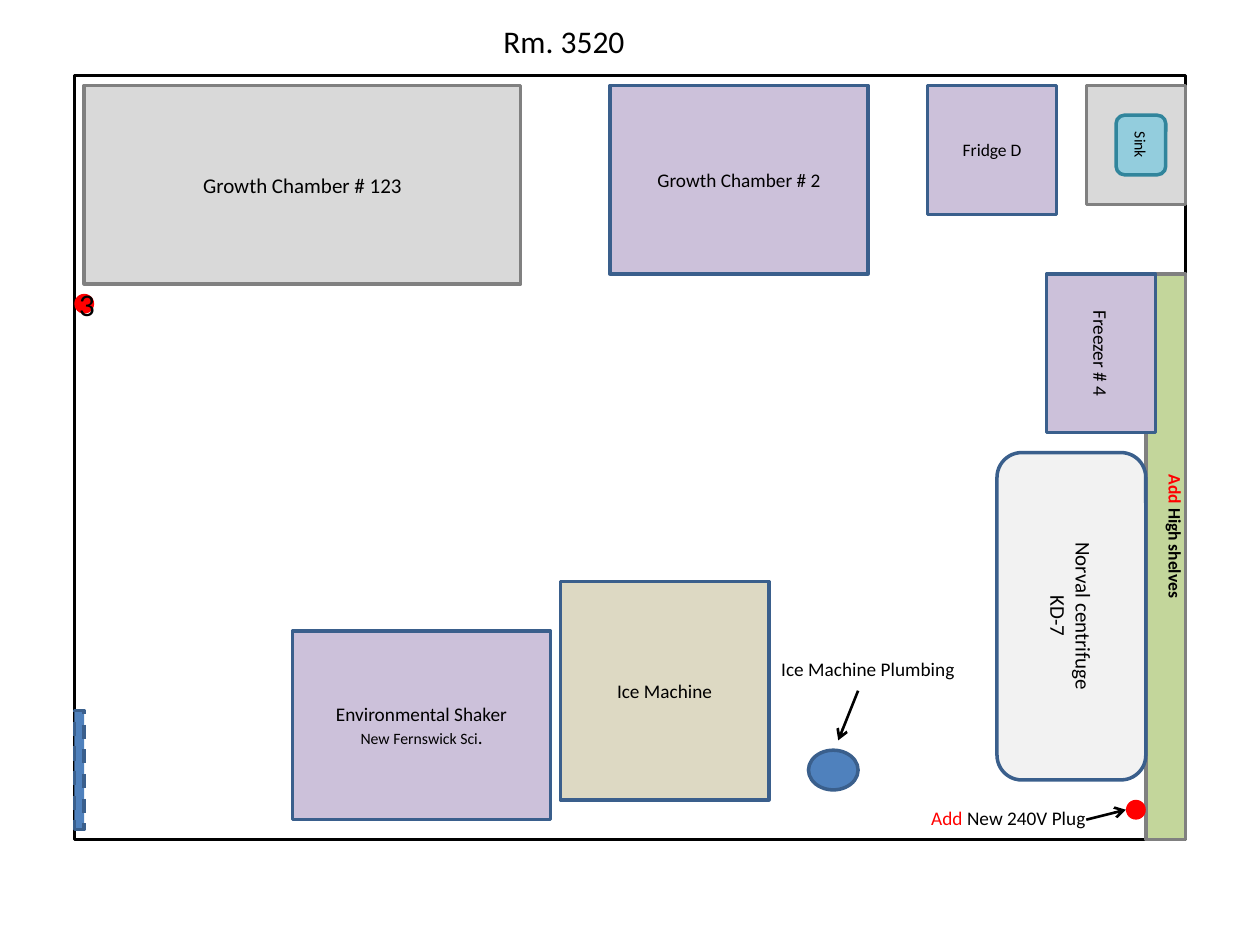
"""Floor plan of a lab room, drawn on a 2 mm grid from the room's corner."""
from lxml import etree
from pptx import Presentation
from pptx import util as u
from pptx.dml.color import RGBColor
from pptx.enum import dml, shapes, text
from pptx.oxml.ns import qn

BLACK = RGBColor(0, 0, 0)
RED = RGBColor(0xFF, 0, 0)
BLUE = RGBColor(0x4F, 0x81, 0xBD)
NAVY = RGBColor(0x3A, 0x5F, 0x8C)
GRAY = RGBColor(0x80, 0x80, 0x80)
SILVER = RGBColor(0xD9, 0xD9, 0xD9)
WHITE = RGBColor(0xF2, 0xF2, 0xF2)
LILAC = RGBColor(0xCC, 0xC1, 0xDA)
GREEN = RGBColor(0xC3, 0xD6, 0x9B)
AQUA = RGBColor(0x93, 0xCD, 0xDD)
TEAL = RGBColor(0x31, 0x85, 0x9C)
SAND = RGBColor(0xDD, 0xD9, 0xC3)

RECT = shapes.MSO_SHAPE.RECTANGLE
ROUND = shapes.MSO_SHAPE.ROUNDED_RECTANGLE
OVAL = shapes.MSO_SHAPE.OVAL
LEFT, TOP = u.Inches(0.59), u.Inches(0.6)
CELL = u.Mm(2)


def spot(col, row):
    """Turn a grid point into slide lengths."""
    return LEFT + round(col * CELL), TOP + round(row * CELL)


def area(col, row, wide, high):
    """Turn a grid box into slide lengths."""
    return (*spot(col, row), round(wide * CELL), round(high * CELL))


def write(frame, paras, size, align=text.PP_ALIGN.CENTER, bold=None, turn=False):
    """Fill a frame with paragraphs of (words, colour, size) runs."""
    if turn:
        frame._txBody.bodyPr.set("vert", "vert")
    for i, runs in enumerate(paras):
        para = frame.paragraphs[0] if i == 0 else frame.add_paragraph()
        para.alignment = align
        para.font.name = "Calibri"
        para.font.size = u.Pt(size)
        para.font.bold = bold
        for words, color, own in runs:
            run = para.add_run()
            run.text = words
            run.font.color.rgb = color
            if own:
                run.font.size = u.Pt(own)


def plain(*lines):
    """Make black paragraphs of one run each."""
    return [[(line, BLACK, None)] for line in lines]


def block(slide, box, fill, line=NAVY, kind=RECT):
    """Draw one thing that stands in the room."""
    shape = slide.shapes.add_shape(kind, *area(*box))
    shape.shadow.inherit = False
    if fill is None:
        shape.fill.background()
    else:
        shape.fill.solid()
        shape.fill.fore_color.rgb = fill
    if line is None:
        shape.line.fill.background()
    else:
        shape.line.color.rgb = line
        shape.line.width = u.Pt(2)
    return shape


def label(slide, box, paras, size, wrap=False, **look):
    """Place free text on the plan."""
    frame = slide.shapes.add_textbox(*area(*box)).text_frame
    frame.word_wrap = wrap
    frame.auto_size = text.MSO_AUTO_SIZE.SHAPE_TO_FIT_TEXT
    write(frame, paras, size, **look)


def arrow(slide, start, end):
    """Draw a black arrow between two grid points."""
    link = slide.shapes.add_connector(
        shapes.MSO_CONNECTOR.STRAIGHT, *spot(*start), *spot(*end))
    link.line.color.rgb = BLACK
    link.line.width = u.Pt(1.5)
    etree.SubElement(link.line._get_or_add_ln(), qn("a:tailEnd"), type="arrow")
    etree.SubElement(link._element.spPr, qn("a:effectLst"))


def main():
    """Build the plan and save it."""
    deck = Presentation()
    deck.slide_width, deck.slide_height = u.Inches(10), u.Inches(7.5)
    slide = deck.slides.add_slide(deck.slide_layouts[6])

    block(slide, (0, 0, 112, 77), None, BLACK)
    door = block(slide, (0, 64, 1, 12), BLUE)
    door.line.dash_style = dml.MSO_LINE.DASH
    block(slide, (102, 1, 10, 12), SILVER, GRAY)
    chamber = block(slide, (1, 1, 44, 20), SILVER, GRAY)
    write(chamber.text_frame, plain("Growth Chamber # 123"), 12)
    sink = block(slide, (104.5, 4.5, 6, 5), AQUA, TEAL, ROUND)
    sink.rotation = 90
    write(sink.text_frame, plain("Sink"), 9)
    block(slide, (108, 20, 4, 57), GREEN, GRAY)
    block(slide, (106, 73, 2, 2), RED, None, OVAL)

    label(slide, (42, -6, 15, 5), plain("Rm. 3520"), 18,
          align=text.PP_ALIGN.LEFT)
    label(slide, (108, 39, 4.7, 19),
          [[("Add ", RED, None), ("High shelves", BLACK, None)]], 10,
          wrap=True, align=text.PP_ALIGN.LEFT, bold=True, turn=True)

    freezer = block(slide, (98, 20, 11, 16), LILAC)
    write(freezer.text_frame, plain("Freezer # 4"), 11, turn=True)
    arrow(slide, (79, 62), (77, 67))
    fridge = block(slide, (86, 1, 13, 13), LILAC)
    write(fridge.text_frame, plain("Fridge D"), 10)
    chamber = block(slide, (54, 1, 26, 19), LILAC)
    write(chamber.text_frame, plain("Growth Chamber # 2"), 11)
    spinner = block(slide, (93, 38, 15, 33), WHITE, kind=ROUND)
    write(spinner.text_frame, plain("Norval centrifuge", "KD-7"), 12, turn=True)
    shaker = block(slide, (22, 56, 26, 19), LILAC)
    maker = [("New Fernswick Sci", BLACK, 9), (".", BLACK, None)]
    write(shaker.text_frame, plain("Environmental Shaker") + [maker], 11)
    ice = block(slide, (49, 51, 21, 22), SAND)
    write(ice.text_frame, plain("Ice Machine"), 11)

    block(slide, (74, 68, 5, 4), BLUE, kind=OVAL)
    label(slide, (70, 58, 20, 3.7), plain("Ice Machine Plumbing"), 11)
    outlet = block(slide, (0, 22, 2, 2), RED, None, OVAL)
    write(outlet.text_frame, plain("3"), 18)
    label(slide, (85, 73, 18.3, 3.7),
          [[("Add", RED, None), (" New 240V Plug", BLACK, None)]], 11)
    arrow(slide, (102, 75), (106, 74))
    deck.save("out.pptx")


if __name__ == "__main__":
    main()
